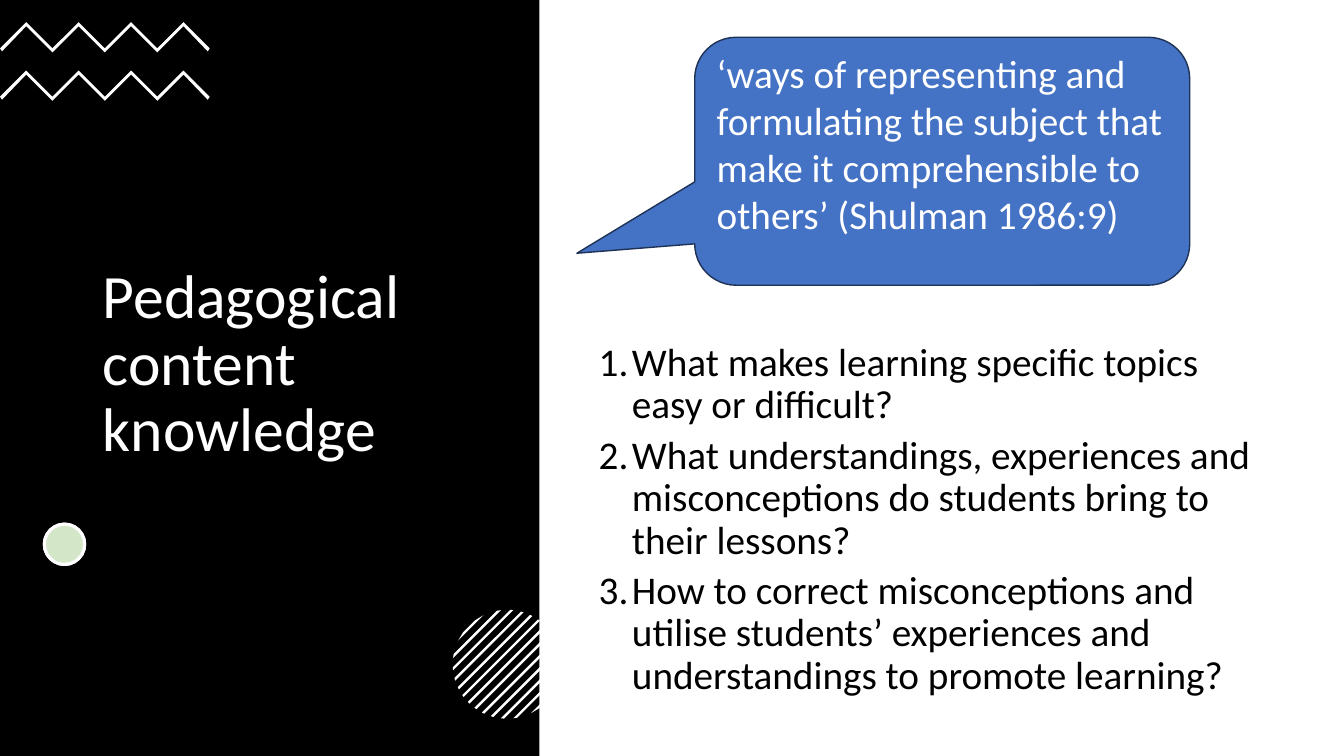
from dataclasses import dataclass
from math import sqrt

from lxml.etree import SubElement as Sub
from pptx import Presentation
from pptx.dml.color import RGBColor as Color
from pptx.enum.shapes import MSO_SHAPE as Kind
from pptx.enum.text import MSO_ANCHOR as Anchor, MSO_AUTO_SIZE as Fit, PP_ALIGN as Align
from pptx.oxml.ns import qn
from pptx.util import Inches, Pt


@dataclass(frozen=True)
class Theme:
    font: str = "Calibri"
    black: str = "000000"
    white: str = "FFFFFF"
    green: str = "70AD47"
    blue: str = "4472C4"
    navy: str = "1E3256"
    head: int = 44
    body: int = 28


@dataclass(frozen=True)
class Box:
    left: float
    top: float
    width: float
    height: float

    def size(self) -> tuple:
        return tuple(Inches(n) for n in (self.left, self.top, self.width, self.height))


@dataclass(frozen=True)
class Part:
    kind: Kind
    box: Box
    fill: str
    line: str = ""
    weight: float = 0
    alpha: int = 100


THEME = Theme()
DOT = Box(0.44, 5.2, 0.4, 0.4)
PANEL = Part(Kind.RECTANGLE, Box(0, 0, 5.35, 7.5), THEME.black)
DOTS = (
    Part(Kind.OVAL, DOT, THEME.white, THEME.white, 2.25),
    Part(Kind.OVAL, DOT, THEME.green, THEME.white, 2.25, 30),
)
BUBBLE = Part(Kind.ROUNDED_RECTANGULAR_CALLOUT, Box(6.89, 0.37, 4.91, 2.46),
              THEME.blue, THEME.navy, 1)
TITLE = "Pedagogical content knowledge"
QUOTE = ("‘ways of representing and formulating the subject that make it "
         "comprehensible to others’ (Shulman 1986:9)")
POINTS = (
    "What makes learning specific topics easy or difficult?",
    "What understandings, experiences and misconceptions do students bring to their lessons?",
    "How to correct misconceptions and utilise students’ experiences and "
    "understandings to promote learning?",
)


def paint(shape, fill: str) -> None:
    shape.shadow.inherit = False
    shape.fill.solid()
    shape.fill.fore_color.rgb = Color.from_string(fill)
    shape.line.fill.background()


def draw(shapes, part: Part):
    shape = shapes.add_shape(part.kind, *part.box.size())
    paint(shape, part.fill)
    if part.line:
        shape.line.color.rgb = Color.from_string(part.line)
        shape.line.width = Pt(part.weight)
    if part.alpha < 100:
        tint = shape.fill._xPr.find(qn("a:solidFill"))[0]
        Sub(tint, qn("a:alpha")).set("val", str(part.alpha * 1000))
    return shape


def trace(shapes, points: list) -> None:
    start, *rest = [(Inches(x), Inches(y)) for x, y in points]
    pen = shapes.build_freeform(*start)
    pen.add_line_segments(rest, close=True)
    paint(pen.convert_to_shape(), THEME.white)


def zigzag(shapes, top: float) -> None:
    step, peaks, rise, thick = 0.26, 8, 0.26, 0.04
    upper = [(i * step, top + (0 if i % 2 else rise)) for i in range(peaks + 1)]
    lower = [(x, y + thick) for x, y in upper[-2:0:-1]]
    end = peaks * step
    tips = [(end - 0.02, top + rise + 0.03), (0.02, top + rise + 0.03)]
    trace(shapes, [*upper, tips[0], *lower, tips[1]])


def stripe(shapes, shift: float) -> None:
    mid_x, mid_y, radius, half = 5.03, 6.59, 0.54, 0.017

    def chord(edge: float) -> list:
        reach = sqrt(max(0, radius ** 2 / 2 - edge ** 2 / 4))
        return [(mid_x + edge / 2 + side * reach, mid_y + edge / 2 - side * reach)
                for side in (1, -1)]

    trace(shapes, chord(shift - half) + chord(shift + half)[::-1])


def style(frame, size: int, color: str) -> None:
    frame.word_wrap = True
    frame.auto_size = Fit.NONE
    for para in frame.paragraphs:
        para.alignment = Align.LEFT
        for run in para.runs:
            run.font.name = THEME.font
            run.font.size = Pt(size)
            run.font.color.rgb = Color.from_string(color)


def number(para) -> None:
    para.line_spacing = 0.9
    para.space_before = Pt(5.8)
    props = para._p.get_or_add_pPr()
    props.set("marL", str(Inches(0.33)))
    props.set("indent", str(-Inches(0.33)))
    Sub(props, qn("a:buFont")).set("typeface", THEME.font)
    Sub(props, qn("a:buAutoNum")).set("type", "arabicPeriod")


def main() -> None:
    deck = Presentation()
    deck.slide_width, deck.slide_height = Inches(13.33), Inches(7.5)
    slide = deck.slides.add_slide(deck.slide_layouts[5])
    shapes = slide.shapes

    panel = draw(shapes, PANEL)
    shapes._spTree.insert(2, panel._element)

    title = shapes.title
    title.left, title.top, title.width, title.height = Box(0.92, 1.31, 3.5, 4.63).size()
    title.text_frame.text = TITLE
    title.text_frame.vertical_anchor = Anchor.MIDDLE
    title.text_frame.paragraphs[0].line_spacing = 0.9
    style(title.text_frame, THEME.head, THEME.white)

    waves = shapes.add_group_shape()
    for top in (0.22, 0.7):
        zigzag(waves.shapes, top)

    for dot in DOTS:
        draw(shapes, dot)

    disc = shapes.add_group_shape()
    for i in range(-6, 7):
        stripe(disc.shapes, i * 0.123)

    body = shapes.add_textbox(*Box(5.84, 3.35, 6.73, 3.96).size()).text_frame
    body.text = "\n".join(POINTS)
    style(body, THEME.body, THEME.black)
    for para in body.paragraphs:
        number(para)

    bubble = draw(shapes, BUBBLE)
    for i, value in enumerate((-0.738, 0.371, 0.167)):
        bubble.adjustments[i] = value
    quote = bubble.text_frame
    quote.text = QUOTE
    quote.vertical_anchor = Anchor.MIDDLE
    quote.margin_bottom = Inches(0.4)
    quote.paragraphs[0].space_after = Pt(6)
    style(quote, THEME.body, THEME.white)

    deck.save("out.pptx")


if __name__ == "__main__":
    main()
